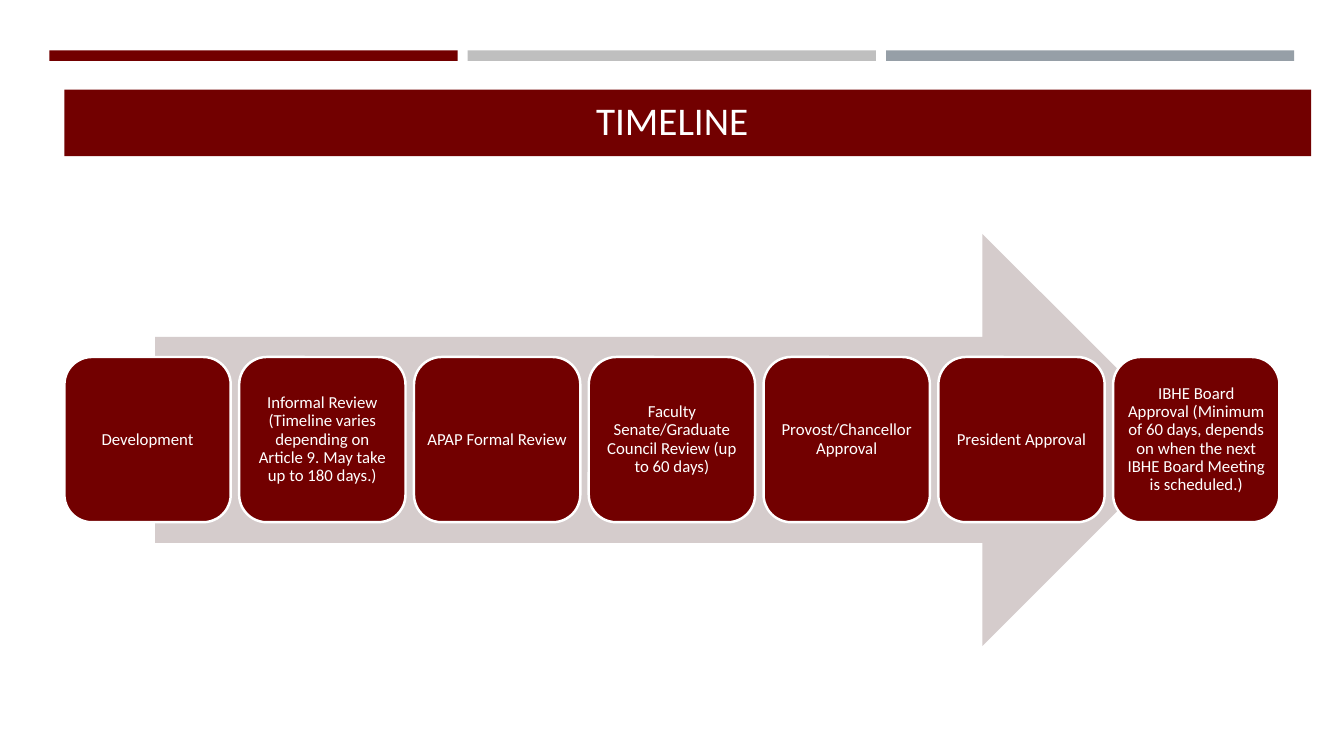
from pptx import Presentation
from pptx import util as u
from pptx.dml.color import RGBColor
from pptx.enum import shapes, text

MAROON = RGBColor(0x72, 0x00, 0x00)
SILVER = RGBColor(0xBF, 0xBF, 0xBF)
SLATE = RGBColor(0x96, 0x9F, 0xA7)
BLUSH = RGBColor(0xD5, 0xCC, 0xCC)
WHITE = RGBColor(0xFF, 0xFF, 0xFF)

STEPS = [
    "Development",
    "Informal Review (Timeline varies depending on Article 9. May take up to 180 days.)",
    "APAP Formal Review",
    "Faculty Senate/Graduate Council Review (up to 60 days)",
    "Provost/Chancellor Approval",
    "President Approval",
    "IBHE Board Approval (Minimum of 60 days, depends on when the next "
    "IBHE Board Meeting is scheduled.)",
]


class TimelineSlide:
    font = "Calibri"
    text_colour = WHITE

    def __init__(self, slide):
        self.slide = slide

    def block(self, kind, left, top, width, height, fill):
        """Add a plain filled shape without outline or shadow."""
        block = self.slide.shapes.add_shape(
            kind, u.Pt(left), u.Pt(top), u.Pt(width), u.Pt(height))
        block.shadow.inherit = False
        block.fill.solid()
        block.fill.fore_color.rgb = fill
        block.line.fill.background()
        return block

    def label(self, frame, words, size, anchor):
        """Fill a text frame with one centred paragraph."""
        frame.word_wrap = True
        frame.vertical_anchor = anchor
        paragraph = frame.paragraphs[0]
        paragraph.alignment = text.PP_ALIGN.CENTER
        paragraph.line_spacing = 0.9
        run = paragraph.add_run()
        run.text = words
        run.font.name = self.font
        run.font.size = u.Pt(size)
        run.font.color.rgb = self.text_colour

    def title(self, words, left, top, width, height):
        title = self.slide.shapes.add_textbox(
            u.Pt(left), u.Pt(top), u.Pt(width), u.Pt(height))
        self.label(title.text_frame, words, 28, text.MSO_ANCHOR.BOTTOM)

    def step(self, words, left, top, width, height):
        step = self.block(shapes.MSO_SHAPE.ROUNDED_RECTANGLE,
                          left, top, width, height, MAROON)
        step.line.color.rgb = WHITE
        step.line.width = u.Pt(1.75)
        frame = step.text_frame
        frame.margin_left = frame.margin_right = u.Pt(3.6)
        frame.margin_top = frame.margin_bottom = u.Pt(3.6)
        self.label(frame, words, 12, text.MSO_ANCHOR.MIDDLE)


def main():
    deck = Presentation()
    deck.slide_width, deck.slide_height = u.Pt(960), u.Pt(540)
    timeline = TimelineSlide(deck.slides.add_slide(deck.slide_layouts[6]))

    for column, colour in enumerate((MAROON, SILVER, SLATE)):
        timeline.block(shapes.MSO_SHAPE.RECTANGLE,
                       35.3 + column * 298.8, 36, 291.6, 7.5, colour)

    timeline.block(shapes.MSO_SHAPE.RECTANGLE, 46, 64, 890.6, 47.5, MAROON)
    timeline.title("TIMELINE", 46, 64, 868.3, 42.5)

    timeline.block(shapes.MSO_SHAPE.RIGHT_ARROW, 110.9, 167, 738, 294.5, BLUSH)
    for position, words in enumerate(STEPS):
        timeline.step(words, 46 + position * 124.85, 255, 118.8, 118)

    deck.save("out.pptx")


if __name__ == "__main__":
    main()
